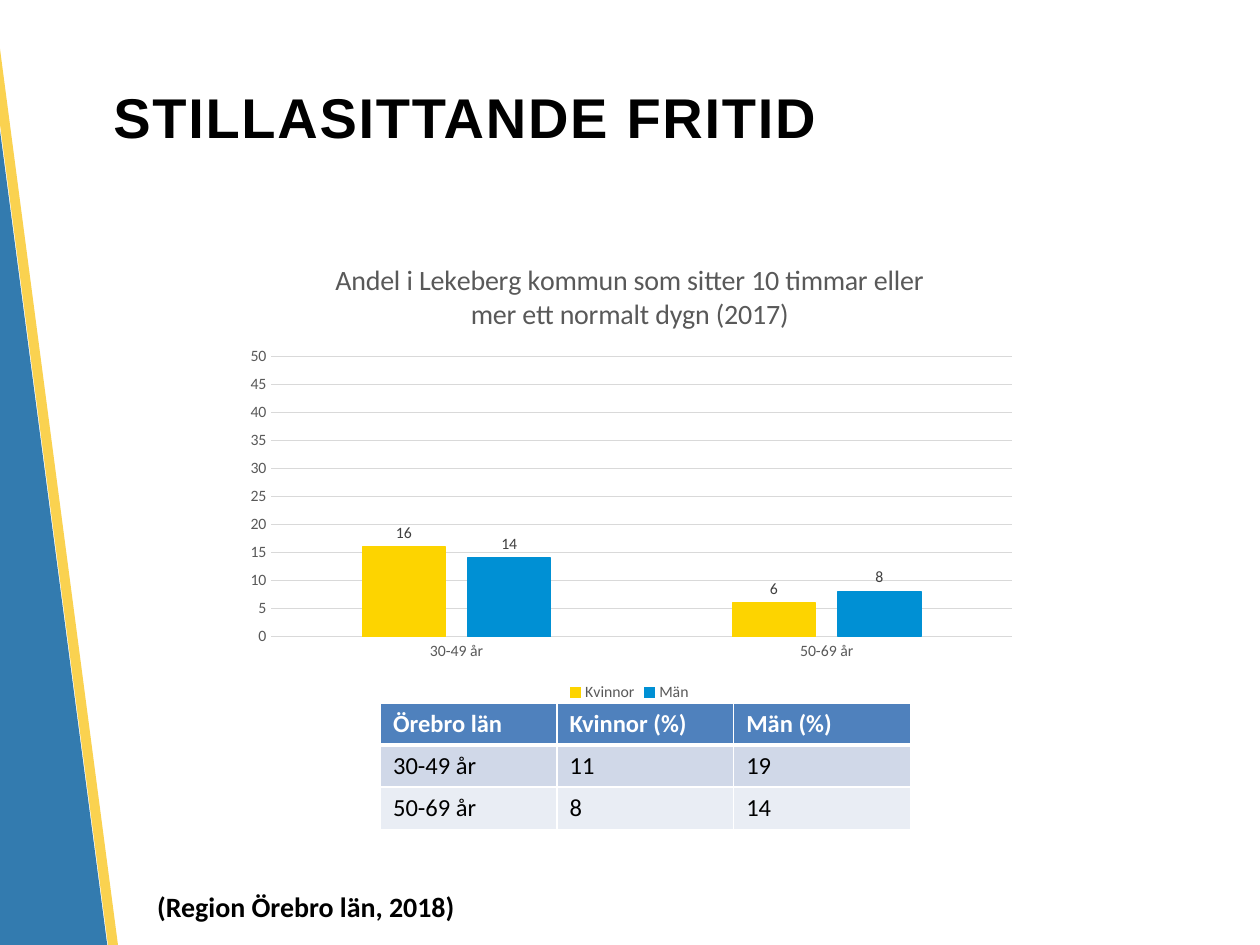
from lxml import etree
from pptx import Presentation
from pptx.chart.data import CategoryChartData
from pptx.dml.color import RGBColor
from pptx.enum import chart as charts, shapes, text
from pptx.oxml import parse_xml
from pptx.oxml.ns import nsdecls, qn
from pptx.util import Cm, Pt

COLOURS = {
    "black": "000000", "white": "FFFFFF", "grey": "595959", "label": "404040",
    "grid": "D9D9D9", "stripe_blue": "005B9C", "stripe_yellow": "FAC828",
    "women": "FDD400", "men": "0090D4",
    "header": "4F81BD", "odd_row": "D0D8E8", "even_row": "E9EDF4",
}


def colour(name):
    return RGBColor.from_string(COLOURS[name])


class SlideBuilder:
    """Holds the text style and the slide being filled."""

    body_font = "Calibri"
    title_font = "Arial"

    def __init__(self, deck):
        self.page = deck.slides.add_slide(deck.slide_layouts[5])

    def style(self, font, size, name="black", bold=False, face=None):
        font.name = face or self.body_font
        font.size = Pt(size)
        font.bold = bold
        font.color.rgb = colour(name)

    def span(self, para, words, size, **look):
        span = para.add_run()
        span.text = words
        self.style(span.font, size, **look)
        return span

    def stripe(self, left, top, width, height, name, opacity):
        stripe = self.page.shapes.add_shape(
            shapes.MSO_SHAPE.RECTANGLE, Cm(left), Cm(top), Cm(width), Cm(height))
        stripe.rotation = 352.5
        stripe.shadow.inherit = False
        stripe.fill.solid()
        stripe.fill.fore_color.rgb = colour(name)
        stripe.line.fill.background()
        tint = stripe.fill._xPr.find(".//" + qn("a:srgbClr"))
        etree.SubElement(tint, qn("a:alpha")).set("val", str(opacity * 1000))

    def title(self, words, left, top, width, height):
        box = self.page.shapes.title
        box.left, box.top, box.width, box.height = Cm(left), Cm(top), Cm(width), Cm(height)
        box.text_frame.vertical_anchor = text.MSO_ANCHOR.MIDDLE
        para = box.text_frame.paragraphs[0]
        para.alignment = text.PP_ALIGN.LEFT
        span = self.span(para, words, 32, bold=True, face=self.title_font)
        span.font._element.set("spc", "100")

    def label(self, words, left, top, width, height):
        box = self.page.shapes.add_textbox(Cm(left), Cm(top), Cm(width), Cm(height))
        box.text_frame.word_wrap = True
        self.span(box.text_frame.paragraphs[0], words, 16, bold=True)

    def cell_borders(self, cell, bottom):
        """Draw white lines round a cell, with its own bottom width."""
        properties = cell._tc.get_or_add_tcPr()
        for side, width in (("L", 1), ("R", 1), ("T", 1), ("B", bottom)):
            properties.append(parse_xml(
                f'<a:ln{side} {nsdecls("a")} w="{Pt(width)}"><a:solidFill>'
                f'<a:srgbClr val="{COLOURS["white"]}"/></a:solidFill></a:ln{side}>'))

    def table(self, rows, left, top, column_width, row_height):
        columns = len(rows[0])
        grid = self.page.shapes.add_table(
            len(rows), columns, Cm(left), Cm(top),
            Cm(column_width * columns), Cm(row_height * len(rows))).table
        fills = ("header", "odd_row", "even_row")
        for i, (row, fill) in enumerate(zip(rows, fills)):
            head = i == 0
            for j, words in enumerate(row):
                cell = grid.cell(i, j)
                self.cell_borders(cell, 3 if head else 1)
                cell.fill.solid()
                cell.fill.fore_color.rgb = colour(fill)
                self.span(cell.text_frame.paragraphs[0], words, 14,
                          name="white" if head else "black", bold=head)

    def axis(self, axis):
        axis.major_tick_mark = axis.minor_tick_mark = charts.XL_TICK_MARK.NONE
        self.style(axis.tick_labels.font, 9, "grey")

    def thin_line(self, line, name):
        line.color.rgb = colour(name)
        line.width = Pt(0.75)

    def plot_area(self, chart, **place):
        """Fix the inner plot area, as shares of the chart."""
        area = chart._chartSpace.chart.plotArea
        for old in area.findall(qn("c:layout")):
            area.remove(old)
        parts = "".join(f'<c:{key} val="{value}"/>' for key, value in place.items())
        area.insert(0, parse_xml(
            f'<c:layout {nsdecls("c")}><c:manualLayout><c:layoutTarget val="inner"/>'
            f'<c:xMode val="edge"/><c:yMode val="edge"/>{parts}'
            '</c:manualLayout></c:layout>'))

    def column_chart(self, heading, categories, series, left, top, width, height):
        data = CategoryChartData()
        data.categories = categories
        for name, values, _ in series:
            data.add_series(name, values)
        chart = self.page.shapes.add_chart(
            charts.XL_CHART_TYPE.COLUMN_CLUSTERED,
            Cm(left), Cm(top), Cm(width), Cm(height), data).chart
        self.style(chart.font, 10)
        chart.has_title = True
        self.span(chart.chart_title.text_frame.paragraphs[0], heading, 16, name="grey")
        chart.chart_title.include_in_layout = False
        chart.has_legend = True
        chart.legend.position = charts.XL_LEGEND_POSITION.BOTTOM
        chart.legend.include_in_layout = False
        self.style(chart.legend.font, 9, "grey")

        self.axis(chart.category_axis)
        self.thin_line(chart.category_axis.format.line, "grid")
        values_axis = chart.value_axis
        self.axis(values_axis)
        values_axis.minimum_scale, values_axis.maximum_scale = 0, 50
        values_axis.major_unit = 5
        values_axis.format.line.fill.background()
        self.thin_line(values_axis.major_gridlines.format.line, "grid")

        plot = chart.plots[0]
        plot.gap_width, plot.overlap = 219, -27
        plot.vary_by_categories = False
        for bars, (_, _, name) in zip(plot.series, series):
            bars.format.fill.solid()
            bars.format.fill.fore_color.rgb = colour(name)
            self.thin_line(bars.format.line, name)
            labels = bars.data_labels
            labels.show_value = True
            labels.position = charts.XL_LABEL_POSITION.OUTSIDE_END
            self.style(labels.font, 9, "label")
        self.plot_area(chart, x=0.05, y=0.25, w=0.93, h=0.6)


def main():
    deck = Presentation()
    deck.slide_width, deck.slide_height = Cm(25.4), Cm(19.05)
    slide = SlideBuilder(deck)
    slide.stripe(-1.32, -4.17, 2.31, 28.78, "stripe_blue", 80)
    slide.stripe(0.97, -4.5, 0.2, 28.75, "stripe_yellow", 81)
    slide.title("STILLASITTANDE FRITID", 2.03, 0.76, 21.97, 3.18)
    slide.label("(Region Örebro län, 2018)", 2.92, 17.81, 6.91, 0.94)
    slide.table(
        [("Örebro län", "Kvinnor (%)", "Män (%)"),
         ("30-49 år", "11", "19"),
         ("50-69 år", "8", "14")],
        7.67, 14.17, 3.56, 0.85)
    slide.column_chart(
        "Andel i Lekeberg kommun som sitter 10 timmar eller mer ett normalt dygn (2017)",
        ("30-49 år", "50-69 år"),
        [("Kvinnor", (16, 6), "women"), ("Män", (14, 8), "men")],
        4.67, 4.83, 16.05, 9.42)
    deck.save("out.pptx")


if __name__ == "__main__":
    main()
